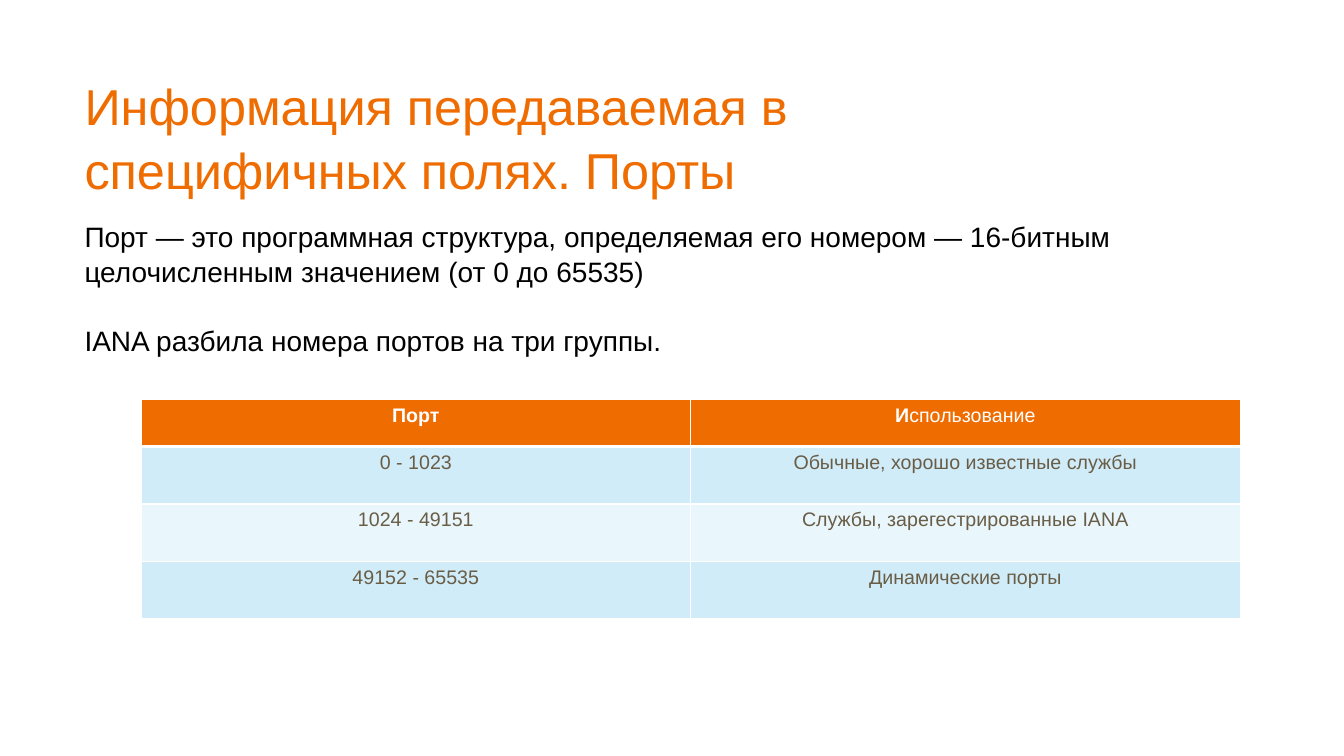
from pptx import Presentation
from pptx.dml.color import RGBColor
from pptx.enum.text import PP_ALIGN
from pptx.oxml import parse_xml
from pptx.oxml.ns import nsdecls
from pptx.util import Inches, Pt


def style(para, size, color):
    para.font.name = "Arial"
    para.font.size = Pt(size)
    para.font.color.rgb = RGBColor.from_string(color)


def border(cell, side, width):
    """Add a white line on one side (L, R, T or B); call before setting the fill."""
    cell._tc.get_or_add_tcPr().append(parse_xml(
        f'<a:ln{side} {nsdecls("a")} w="{Pt(width)}"><a:solidFill>'
        f'<a:srgbClr val="FFFFFF"/></a:solidFill></a:ln{side}>'))


ORANGE = "EF6C00"

deck = Presentation()
deck.slide_width = Inches(13.33)
deck.slide_height = Inches(7.5)
slide = deck.slides.add_slide(deck.slide_layouts[6])

# Title and body text
blocks = [
    (0.67, 9.4, 1.44, 36, ORANGE,
     ["Информация передаваемая в специфичных полях. Порты"]),
    (2.11, 12.14, 5.25, 20, "000000",
     ["Порт — это программная структура, определяемая его номером — 16-битным "
      "целочисленным значением (от 0 до 65535)",
      "IANA разбила номера портов на три группы."]),
]
for top, width, height, size, color, lines in blocks:
    box = slide.shapes.add_textbox(Inches(0.74), Inches(top), Inches(width), Inches(height))
    frame = box.text_frame
    frame.word_wrap = True
    frame.text = "\n".join(lines)
    for para in frame.paragraphs:
        style(para, size, color)
        para.line_spacing = 1.05
    for para in frame.paragraphs[1:]:
        para.space_before = Pt(24)

# Port table
rows = [
    ("Порт", "Использование"),
    ("0 - 1023", "Обычные, хорошо известные службы"),
    ("1024 - 49151", "Службы, зарегестрированные IANA"),
    ("49152 - 65535", "Динамические порты"),
]
fills = [ORANGE, "D1ECF9", "E9F6FC", "D1ECF9"]
table = slide.shapes.add_table(
    len(rows), 2, Inches(1.4), Inches(3.96), Inches(10.9), Inches(2.18)).table
for r, row in enumerate(rows):
    head = r == 0
    table.rows[r].height = Inches(0.47 if head else 0.57)
    for c, text in enumerate(row):
        cell = table.cell(r, c)
        for side in "LRTB":
            thick = (head and side == "B") or (r == 1 and side == "T")
            border(cell, side, 3 if thick else 1)
        cell.fill.solid()
        cell.fill.fore_color.rgb = RGBColor.from_string(fills[r])
        cell.text = text
        para = cell.text_frame.paragraphs[0]
        para.alignment = PP_ALIGN.CENTER
        style(para, 14, "FFFFFF" if head else "695D46")
        para.font.bold = head

# Only the first letter of the second heading is bold
para = table.cell(0, 1).text_frame.paragraphs[0]
first = para.runs[0]
rest = para.add_run()
first.text, rest.text = rows[0][1][:1], rows[0][1][1:]
first.font.bold = True
rest.font.bold = False

deck.save("out.pptx")
